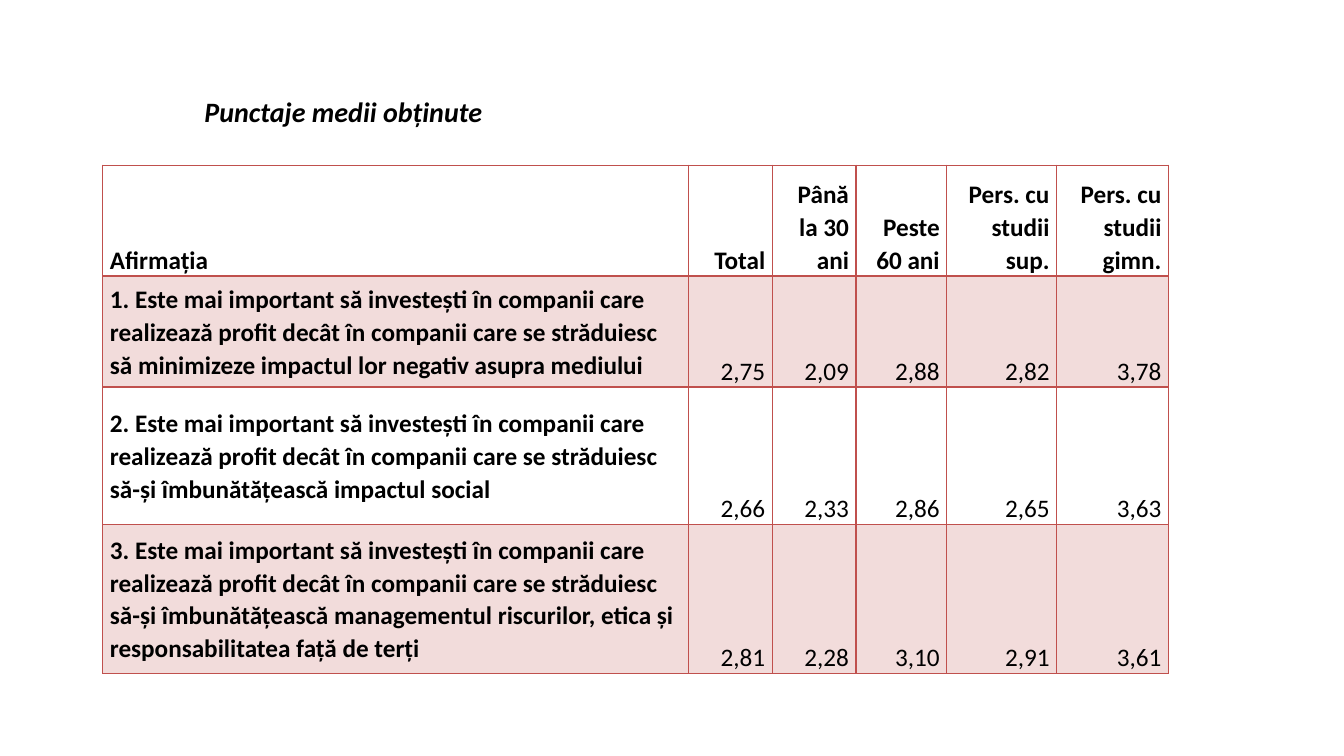
from dataclasses import dataclass

from lxml.etree import SubElement
from pptx import Presentation
from pptx.dml.color import RGBColor
from pptx.enum.text import MSO_ANCHOR, PP_ALIGN
from pptx.oxml.ns import qn
from pptx.slide import Slide
from pptx.table import _Cell
from pptx.text.text import _Paragraph
from pptx.util import Inches, Pt


@dataclass(frozen=True)
class Theme:
    font: str = "Calibri"
    ink: str = "000000"
    accent: str = "C0504D"
    band_opacity: int = 20
    title_size: int = 20
    table_size: int = 18
    thin: int = 1
    thick: int = 2


@dataclass(frozen=True)
class ScoreRow:
    label: str
    values: tuple[str, ...]
    height: float


THEME = Theme()
COLUMN_WIDTHS = (5.81, 0.83, 0.83, 0.9, 1.09, 1.11)
OPENING = (
    "Este mai important să investești în companii care realizează profit "
    "decât în companii care se străduiesc "
)
ROWS = (
    ScoreRow(
        "Afirmația",
        ("Total", "Până la 30 ani", "Peste 60 ani", "Pers. cu studii sup.", "Pers. cu studii gimn."),
        1.1,
    ),
    ScoreRow(
        f"1. {OPENING}să minimizeze impactul lor negativ asupra mediului",
        ("2,75", "2,09", "2,88", "2,82", "3,78"),
        1.1,
    ),
    ScoreRow(
        f"2. {OPENING}să-și îmbunătățească impactul social",
        ("2,66", "2,33", "2,86", "2,65", "3,63"),
        1.36,
    ),
    ScoreRow(
        f"3. {OPENING}să-și îmbunătățească managementul riscurilor, "
        "etica și responsabilitatea față de terți",
        ("2,81", "2,28", "3,10", "2,91", "3,61"),
        1.48,
    ),
)


def style_text(para: _Paragraph, size: int, bold: bool, italic: bool = False) -> None:
    """Set the font of a whole paragraph."""
    para.font.name = THEME.font
    para.font.size = Pt(size)
    para.font.bold = bold
    para.font.italic = italic
    para.font.color.rgb = RGBColor.from_string(THEME.ink)


def draw_borders(cell: _Cell, top: int, bottom: int) -> None:
    """Outline a cell with accent lines of the given widths in points."""
    properties = cell._tc.get_or_add_tcPr()
    widths = {"a:lnL": THEME.thin, "a:lnR": THEME.thin, "a:lnT": top, "a:lnB": bottom}
    for tag, width in widths.items():
        line = SubElement(properties, qn(tag), w=str(Pt(width)))
        fill = SubElement(line, qn("a:solidFill"))
        SubElement(fill, qn("a:srgbClr"), val=THEME.accent)


def fill_cell(cell: _Cell, banded: bool) -> None:
    """Tint a banded cell with the translucent accent, or leave it clear."""
    if not banded:
        cell.fill.background()
        return
    cell.fill.solid()
    cell.fill.fore_color.rgb = RGBColor.from_string(THEME.accent)
    color = cell._tc.tcPr.find(f"{qn('a:solidFill')}/{qn('a:srgbClr')}")
    SubElement(color, qn("a:alpha"), val=str(THEME.band_opacity * 1000))


def draw_cell(cell: _Cell, text: str, row: int, column: int) -> None:
    """Write and format one table cell according to its place."""
    is_header, is_label = row == 0, column == 0
    cell.margin_left = cell.margin_right = Inches(0.07)
    cell.margin_top = cell.margin_bottom = 0
    cell.vertical_anchor = MSO_ANCHOR.MIDDLE if is_label and not is_header else MSO_ANCHOR.BOTTOM
    cell.text = text
    para = cell.text_frame.paragraphs[0]
    para.alignment = PP_ALIGN.LEFT if is_label else PP_ALIGN.RIGHT
    para.line_spacing = 1.07
    style_text(para, THEME.table_size, bold=is_header or is_label)
    draw_borders(
        cell,
        top=THEME.thick if row == 1 else THEME.thin,
        bottom=THEME.thick if is_header else THEME.thin,
    )
    fill_cell(cell, banded=row % 2 == 1)


def draw_title(page: Slide) -> None:
    """Place the heading above the table."""
    box = page.shapes.add_textbox(Inches(1.93), Inches(0.89), Inches(2.97), Inches(0.44))
    box.text_frame.word_wrap = False
    para = box.text_frame.paragraphs[0]
    para.text = "Punctaje medii obținute"
    style_text(para, THEME.title_size, bold=True, italic=True)


def draw_scores(page: Slide) -> None:
    """Build the table of mean scores."""
    frame = page.shapes.add_table(
        len(ROWS), len(COLUMN_WIDTHS), Inches(1.02), Inches(1.64),
        Inches(sum(COLUMN_WIDTHS)), Inches(sum(row.height for row in ROWS)),
    )
    table = frame.table
    table.horz_banding = False
    table.first_row = False
    for column, width in zip(table.columns, COLUMN_WIDTHS):
        column.width = Inches(width)
    for row_index, score in enumerate(ROWS):
        table.rows[row_index].height = Inches(score.height)
        for column_index, text in enumerate((score.label, *score.values)):
            draw_cell(table.cell(row_index, column_index), text, row_index, column_index)


def main() -> None:
    """Create the deck and save it."""
    deck = Presentation()
    deck.slide_width, deck.slide_height = Inches(13.33), Inches(7.5)
    page = deck.slides.add_slide(deck.slide_layouts[6])
    draw_title(page)
    draw_scores(page)
    deck.save("out.pptx")


if __name__ == "__main__":
    main()
